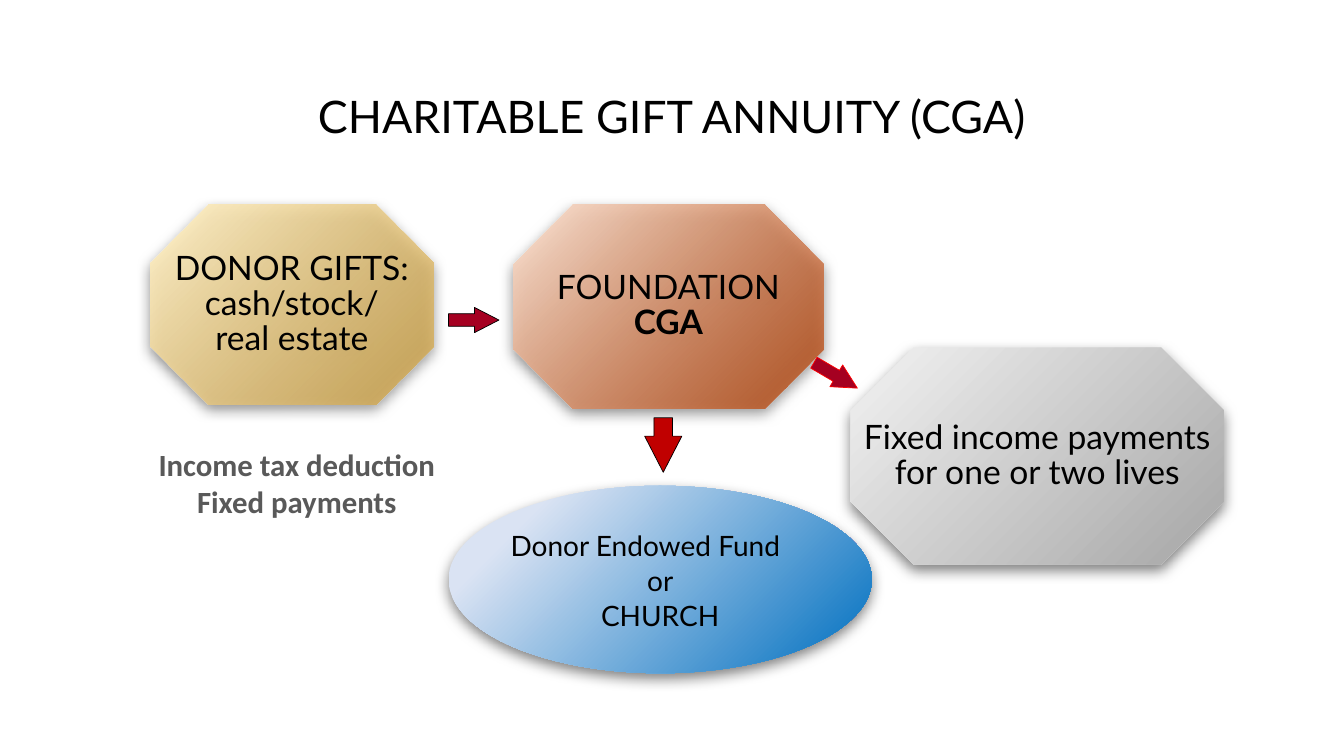
from dataclasses import dataclass

import pptx
import pptx.dml.color
import pptx.enum.shapes
import pptx.enum.text
import pptx.oxml
import pptx.oxml.ns
import pptx.util

Pt = pptx.util.Pt
SHAPE = pptx.enum.shapes.MSO_SHAPE
ALIGN = pptx.enum.text.PP_ALIGN
ANCHOR = pptx.enum.text.MSO_ANCHOR
NS = pptx.oxml.ns.nsdecls("a")
BLACK = "000000"


@dataclass
class Box:
    left: float
    top: float
    width: float
    height: float


@dataclass
class Line:
    text: str
    bold: bool = False
    align: ALIGN = ALIGN.CENTER


@dataclass
class Stop:
    color: str
    position: float
    alpha: int = 100


@dataclass
class Node:
    kind: SHAPE
    box: Box
    stops: list[Stop]
    size: float
    lines: list[Line]
    wrap: bool = False
    corner: float | None = None


@dataclass
class Arrow:
    box: Box
    fill: str
    line: str = BLACK
    rotation: float = 0


@dataclass
class Label:
    box: Box
    lines: list[Line]
    font: str
    size: float
    color: str
    anchor: ANCHOR


NODES = [
    Node(SHAPE.OCTAGON, Box(107.3, 146.2, 202.3, 142.6),
         [Stop("FFF2CC", 0), Stop("D1A240", 1, 75)], 24,
         [Line("DONOR GIFTS:"), Line("cash/stock/"), Line("real estate")], corner=0.29),
    Node(SHAPE.OCTAGON, Box(366.5, 146.2, 221.8, 145.4),
         [Stop("FBE5D6", 0), Stop("B63D00", 1, 75)], 24,
         [Line("FOUNDATION"), Line("CGA", bold=True)], corner=0.29),
    Node(SHAPE.OCTAGON, Box(607.7, 248.4, 266.4, 154.8),
         [Stop("F2F2F2", 0), Stop("A6A6A6", 1)], 24,
         [Line("Fixed income payments"), Line("for one or two lives")], corner=0.29),
    Node(SHAPE.OVAL, Box(320.4, 347, 302.4, 133.9),
         [Stop("DAE3F3", 0.18), Stop("0070C0", 0.99)], 20,
         [Line("Donor Endowed Fund", align=ALIGN.LEFT), Line("or"), Line("CHURCH")],
         wrap=True),
]

ARROWS = [
    Arrow(Box(320.4, 219.6, 36, 18), "A50021"),
    Arrow(Box(578.9, 259.2, 36, 18), "A50021", "FF0000", 30.4),
    Arrow(Box(454.3, 304.6, 38.9, 26.6), "C00000", rotation=90),
]

LABELS = [
    Label(Box(120, 59.8, 720, 46), [Line("CHARITABLE GIFT ANNUITY (CGA)")],
          "Lato", 32, BLACK, ANCHOR.MIDDLE),
    Label(Box(72, 314.6, 280, 60.5),
          [Line("Income tax deduction", bold=True), Line("Fixed payments", bold=True)],
          "Calibri", 22, "595959", ANCHOR.TOP),
]


def rgb(color: str) -> pptx.dml.color.RGBColor:
    return pptx.dml.color.RGBColor.from_string(color)


def frame(box: Box) -> list[pptx.util.Length]:
    return [Pt(v) for v in (box.left, box.top, box.width, box.height)]


def write_lines(tf, lines: list[Line], font: str, size: float, color: str,
                spacing: float | None = None) -> None:
    for i, line in enumerate(lines):
        p = tf.add_paragraph() if i else tf.paragraphs[0]
        p.alignment = line.align
        if spacing:
            p.line_spacing = Pt(spacing)
        r = p.add_run()
        r.text = line.text
        r.font.name, r.font.size, r.font.bold = font, Pt(size), line.bold
        r.font.color.rgb = rgb(color)


def fill_gradient(sp, stops: list[Stop]) -> None:
    """Fill from the top left to the bottom right corner."""
    sp.fill.gradient()
    sp.fill.gradient_angle = 315
    for gs, stop in zip(sp.fill.gradient_stops, stops):
        gs.position = stop.position
        gs.color.rgb = rgb(stop.color)
    colors = sp.element.spPr.iter(pptx.oxml.ns.qn("a:srgbClr"))
    for clr, stop in zip(list(colors), stops):
        if stop.alpha < 100:
            clr.append(pptx.oxml.parse_xml(f'<a:alpha {NS} val="{stop.alpha * 1000}"/>'))


def add_soft_shadow(sp) -> None:
    sp.shadow.inherit = False
    effects = sp.element.spPr.find(pptx.oxml.ns.qn("a:effectLst"))
    effects.append(pptx.oxml.parse_xml(
        f'<a:outerShdw {NS} blurRad="{Pt(10)}" dist="{Pt(4)}" dir="5400000" '
        'algn="t" rotWithShape="0">'
        f'<a:srgbClr val="{BLACK}"><a:alpha val="50000"/></a:srgbClr></a:outerShdw>'))


def add_node(slide, node: Node) -> None:
    sp = slide.shapes.add_shape(node.kind, *frame(node.box))
    if node.corner is not None:
        sp.adjustments[0] = node.corner
    fill_gradient(sp, node.stops)
    sp.line.fill.background()
    add_soft_shadow(sp)
    tf = sp.text_frame
    tf.margin_left = tf.margin_right = tf.margin_top = tf.margin_bottom = 0
    tf.word_wrap = node.wrap
    tf.vertical_anchor = ANCHOR.MIDDLE
    write_lines(tf, node.lines, "Lato", node.size, BLACK, spacing=25)


def add_arrow(slide, arrow: Arrow) -> None:
    sp = slide.shapes.add_shape(SHAPE.RIGHT_ARROW, *frame(arrow.box))
    sp.adjustments[0], sp.adjustments[1] = 0.5, 0.97
    sp.rotation = arrow.rotation
    sp.shadow.inherit = False
    sp.fill.solid()
    sp.fill.fore_color.rgb = rgb(arrow.fill)
    sp.line.color.rgb = rgb(arrow.line)
    sp.line.width = Pt(0.5)


def add_label(slide, label: Label) -> None:
    tf = slide.shapes.add_textbox(*frame(label.box)).text_frame
    tf.word_wrap = True
    tf.vertical_anchor = label.anchor
    write_lines(tf, label.lines, label.font, label.size, label.color)


def main() -> None:
    prs = pptx.Presentation()
    prs.slide_width, prs.slide_height = Pt(960), Pt(540)
    slide = prs.slides.add_slide(prs.slide_layouts[6])
    for node in NODES:
        add_node(slide, node)
    for arrow in ARROWS:
        add_arrow(slide, arrow)
    for label in LABELS:
        add_label(slide, label)
    prs.save("out.pptx")


if __name__ == "__main__":
    main()
